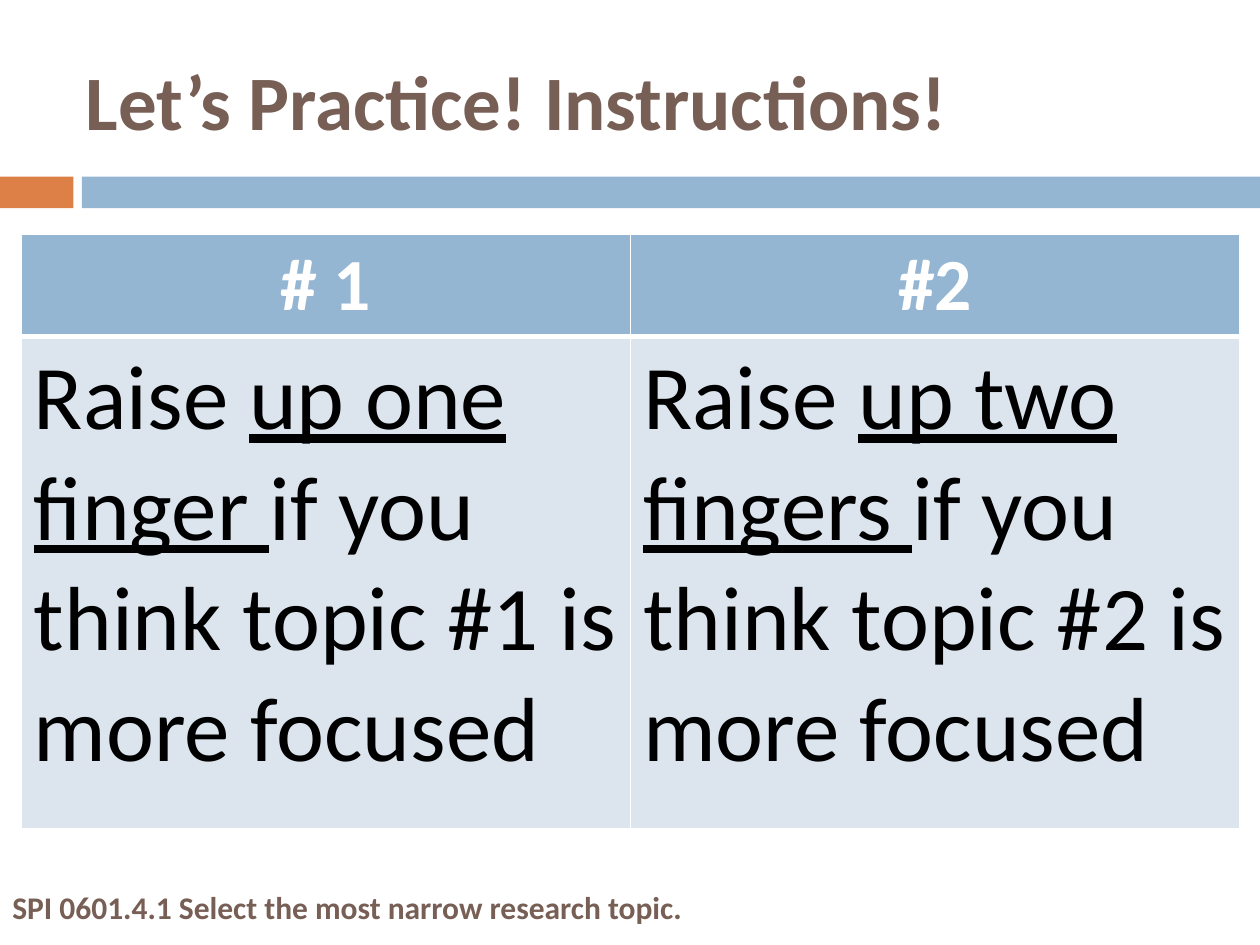
import pptx
import pptx.dml.color
import pptx.enum.shapes
import pptx.enum.text
import pptx.oxml
import pptx.util
from pptx.util import Cm

COLORS = {
    "orange": "DD8047",
    "blue": "94B6D2",
    "pale": "DCE5EE",
    "brown": "775F55",
    "white": "FFFFFF",
    "black": "000000",
}
FORMATS = {
    "title": {"size": 44, "bold": True, "color": "brown"},
    "footer": {"size": 18, "bold": True, "color": "brown"},
    "header": {"size": 42, "bold": True, "color": "white"},
    "body": {"size": 52, "bold": False, "color": "black"},
}
ALIGN = pptx.enum.text.PP_ALIGN
ANCHOR = pptx.enum.text.MSO_ANCHOR
COLUMNS = [
    ("# 1", "up one finger ", "if you think topic #1 is more focused"),
    ("#2", "up two fingers ", "if you think topic #2 is more focused"),
]


def rgb(name):
    return pptx.dml.color.RGBColor.from_string(COLORS[name])


def add_run(p, text, style, underline=False):
    r = p.add_run()
    r.text = text
    fmt = FORMATS[style]
    values = {
        "name": "Calibri",
        "size": pptx.util.Pt(fmt["size"]),
        "bold": fmt["bold"],
        "underline": underline,
    }
    for key, value in values.items():
        setattr(r.font, key, value)
    r.font.color.rgb = rgb(fmt["color"])


def add_text(s, box, text, style, anchor):
    tf = s.shapes.add_textbox(*box).text_frame
    tf.word_wrap = True
    tf.vertical_anchor = anchor
    add_run(tf.paragraphs[0], text, style)


def add_band(s, left, top, width, height):
    square, gap = Cm(1.48), Cm(0.17)
    bar = square + gap
    for x, w, color in ((0, square, "orange"), (bar, width - bar, "blue")):
        sp = s.shapes.add_shape(
            pptx.enum.shapes.MSO_SHAPE.RECTANGLE, left + x, top, w, height)
        sp.shadow.inherit = False
        sp.fill.solid()
        sp.fill.fore_color.rgb = rgb(color)
        sp.line.fill.background()


def format_cell(cell, color, top, bottom):
    tcPr = cell._tc.get_or_add_tcPr()
    for side, points in (("L", 1), ("R", 1), ("T", top), ("B", bottom)):
        tcPr.append(pptx.oxml.parse_xml(
            '<a:ln%s xmlns:a="http://schemas.openxmlformats.org/drawingml/2006/main" w="%d">'
            '<a:solidFill><a:srgbClr val="%s"/></a:solidFill></a:ln%s>'
            % (side, pptx.util.Pt(points), COLORS["white"], side)))
    cell.fill.solid()
    cell.fill.fore_color.rgb = rgb(color)


def add_instructions(s, left, top, width, height):
    table = s.shapes.add_table(2, len(COLUMNS), left, top, width, height).table
    header_height = Cm(2.06)
    table.rows[0].height = header_height
    table.rows[1].height = height - header_height
    for i, (heading, action, condition) in enumerate(COLUMNS):
        header, body = table.cell(0, i), table.cell(1, i)
        format_cell(header, "blue", 1, 3)
        format_cell(body, "pale", 3, 1)
        p = header.text_frame.paragraphs[0]
        p.alignment = ALIGN.CENTER
        add_run(p, heading, "header")
        p = body.text_frame.paragraphs[0]
        add_run(p, "Raise ", "body")
        add_run(p, action, "body", underline=True)
        add_run(p, condition, "body")


def main():
    prs = pptx.Presentation()
    prs.slide_width, prs.slide_height = Cm(25.4), Cm(19.05)
    s = prs.slides.add_slide(prs.slide_layouts[6])
    add_band(s, 0, Cm(3.56), prs.slide_width, Cm(0.64))
    add_text(s, (Cm(1.48), Cm(0.64), Cm(23.92), Cm(2.74)),
             "Let’s Practice! Instructions!", "title", ANCHOR.MIDDLE)
    add_instructions(s, Cm(0.43), Cm(4.72), Cm(24.56), Cm(11.98))
    add_text(s, (0, Cm(17.78), prs.slide_width, Cm(1.02)),
             "SPI 0601.4.1 Select the most narrow research topic.", "footer", ANCHOR.TOP)
    prs.save("out.pptx")


if __name__ == "__main__":
    main()
